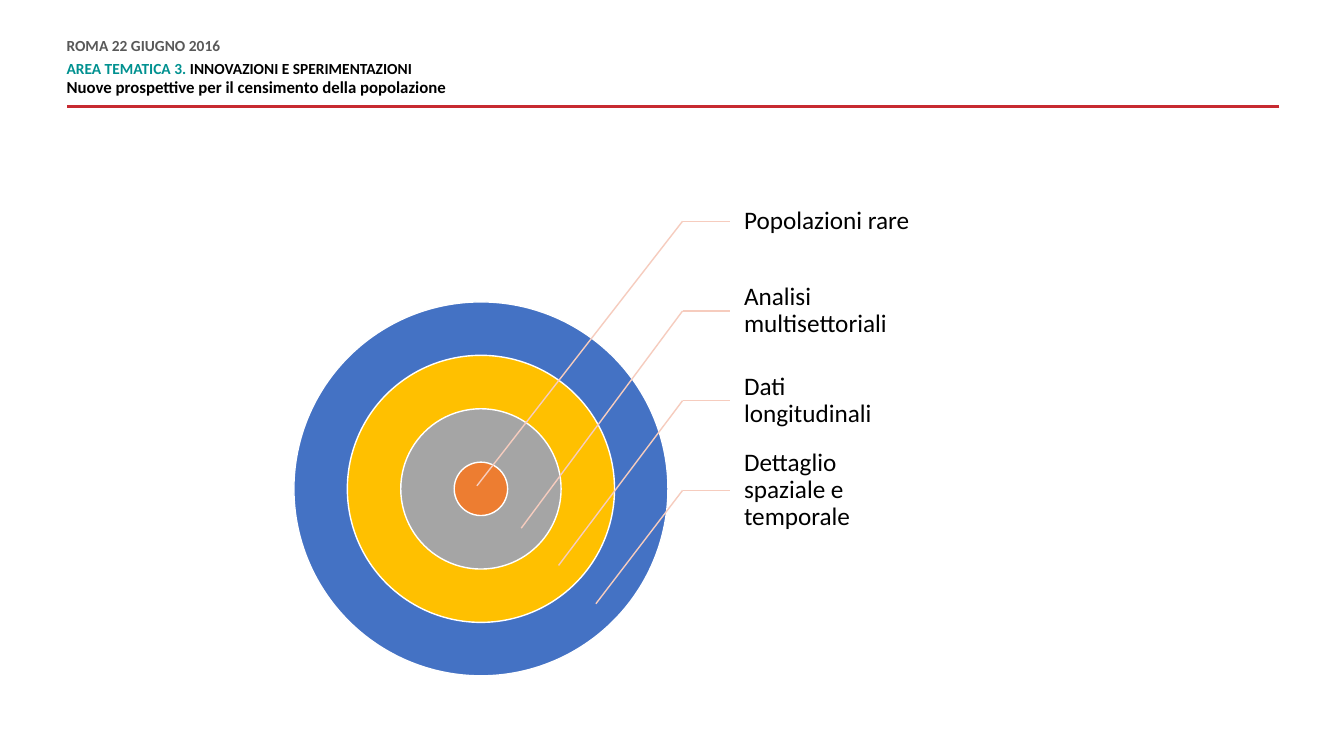
from dataclasses import dataclass

from lxml import etree
from pptx import Presentation
from pptx import util as u
from pptx.dml.color import RGBColor
from pptx.enum import shapes, text
from pptx.oxml import ns
from pptx.slide import Slide


@dataclass(frozen=True)
class Theme:
    font: str = "Calibri"
    rule: str = "C72A31"
    date: str = "595959"
    area: str = "009190"
    ink: str = "000000"
    edge: str = "FFFFFF"
    lead: str = "F6CCBE"
    small: float = 11
    head: float = 12
    label: float = 18


@dataclass(frozen=True)
class Ring:
    label: str
    fill: str
    tip_x: float
    tip_y: float


THEME = Theme()
RINGS = [
    Ring("Popolazioni rare", "ED7D31", 4.73, 4.82),
    Ring("Analisi multisettoriali", "A5A5A5", 5.17, 5.24),
    Ring("Dati longitudinali", "FFC000", 5.54, 5.61),
    Ring("Dettaglio spaziale e temporale", "4472C4", 5.91, 5.99),
]
MID_X, MID_Y, CORE = 4.77, 4.85, 0.53
BEND, LEFT, TOP, WIDTH, PITCH = 6.77, 7.24, 1.75, 1.86, 0.89


def style(run, size: float, color: str, bold: bool = False) -> None:
    run.font.name = THEME.font
    run.font.size = u.Pt(size)
    run.font.bold = bold
    run.font.color.rgb = RGBColor.from_string(color)


def set_frame(frame, left: float, pad: float, anchor) -> None:
    frame.word_wrap = True
    frame.auto_size = text.MSO_AUTO_SIZE.NONE
    frame.vertical_anchor = anchor
    frame.margin_left = u.Inches(left)
    frame.margin_top = frame.margin_right = frame.margin_bottom = u.Inches(pad)


def add_line(slide: Slide, x1: float, y1: float, x2: float, y2: float,
             color: str, width: float) -> None:
    line = slide.shapes.add_connector(
        shapes.MSO_CONNECTOR.STRAIGHT,
        u.Inches(x1), u.Inches(y1), u.Inches(x2), u.Inches(y2))
    line.line.color.rgb = RGBColor.from_string(color)
    line.line.width = u.Pt(width)
    etree.SubElement(line._element.spPr, ns.qn("a:effectLst"))


def add_head(slide: Slide) -> None:
    title = slide.shapes.title
    title.left, title.top = u.Inches(0.66), u.Inches(0.39)
    title.width, title.height = u.Inches(8.34), u.Inches(0.59)
    frame = title.text_frame
    set_frame(frame, 0, 0, text.MSO_ANCHOR.TOP)
    rows = [
        (0, 6, [("ROMA 22 GIUGNO 2016", THEME.small, THEME.date)]),
        (0, 0, [("AREA TEMATICA 3. ", THEME.small, THEME.area),
                ("INNOVAZIONI E SPERIMENTAZIONI", THEME.small, THEME.ink)]),
        (3, 6, [("Nuove prospettive per il censimento della popolazione",
                 THEME.head, THEME.ink)]),
    ]
    frame.text = "\n".join("" for _ in rows)
    for para, (before, after, parts) in zip(frame.paragraphs, rows):
        para.alignment = text.PP_ALIGN.LEFT
        para.line_spacing = u.Pt(10.8)
        para.space_before, para.space_after = u.Pt(before), u.Pt(after)
        for words, size, color in parts:
            run = para.add_run()
            run.text = words
            style(run, size, color, True)


def add_ring(slide: Slide, ring: Ring, size: float) -> None:
    disc = slide.shapes.add_shape(
        shapes.MSO_SHAPE.OVAL, u.Inches(MID_X - size / 2),
        u.Inches(MID_Y - size / 2), u.Inches(size), u.Inches(size))
    disc.shadow.inherit = False
    disc.fill.solid()
    disc.fill.fore_color.rgb = RGBColor.from_string(ring.fill)
    disc.line.color.rgb = RGBColor.from_string(THEME.edge)
    disc.line.width = u.Pt(1)


def add_label(slide: Slide, ring: Ring, top: float) -> None:
    box = slide.shapes.add_textbox(
        u.Inches(LEFT), u.Inches(top), u.Inches(WIDTH), u.Inches(PITCH))
    frame = box.text_frame
    set_frame(frame, 0.14, 0.03, text.MSO_ANCHOR.MIDDLE)
    frame.text = ring.label
    para = frame.paragraphs[0]
    para.line_spacing = 0.9
    style(para.runs[0], THEME.label, THEME.ink)
    level = top + PITCH / 2
    add_line(slide, BEND, level, LEFT, level, THEME.lead, 1)
    add_line(slide, BEND, level, ring.tip_x, ring.tip_y, THEME.lead, 1)


def main() -> None:
    deck = Presentation()
    deck.slide_width, deck.slide_height = u.Inches(13.33), u.Inches(7.5)
    slide = deck.slides.add_slide(deck.slide_layouts[5])
    add_line(slide, 12.69, 1.06, 0.66, 1.06, THEME.rule, 2)
    add_head(slide)
    for i, ring in reversed(list(enumerate(RINGS))):
        add_ring(slide, ring, CORE * (2 * i + 1))
    for i, ring in enumerate(RINGS):
        add_label(slide, ring, TOP + PITCH * i)
    deck.save("out.pptx")


if __name__ == "__main__":
    main()
